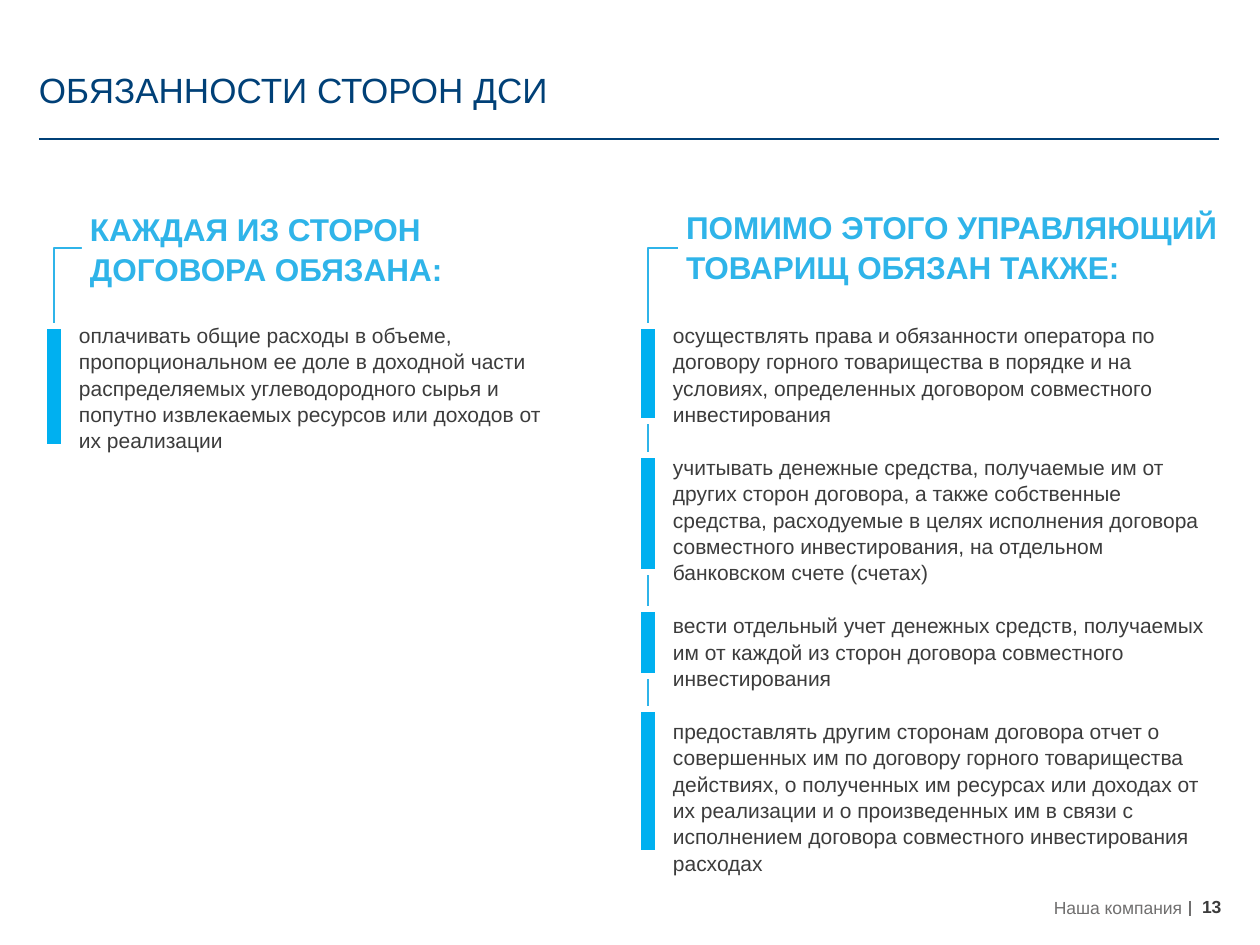
from pptx import Presentation
from pptx.dml.color import RGBColor
from pptx.enum.shapes import MSO_CONNECTOR, MSO_SHAPE
from pptx.enum.text import MSO_ANCHOR, PP_ALIGN
from pptx.oxml.ns import qn
from pptx.util import Emu, Pt
from lxml.etree import SubElement

NAVY, SKY, CYAN = "004077", "2FB4E9", "00B0F0"
DARK, GREY, WHITE = "3C3C3C", "706F6F", "FFFFFF"
TOP = 248
BAR = 20

LEFT = ["оплачивать общие расходы в объеме, пропорциональном ее доле в доходной части "
        "распределяемых углеводородного сырья и попутно извлекаемых ресурсов или доходов "
        "от их реализации"]
RIGHT = [
    "осуществлять права и обязанности оператора по договору горного товарищества в порядке "
    "и на условиях, определенных договором совместного инвестирования",
    "учитывать денежные средства, получаемые им от других сторон договора, а также "
    "собственные средства, расходуемые в целях исполнения договора совместного "
    "инвестирования, на отдельном банковском счете (счетах)",
    "вести отдельный учет денежных средств, получаемых им от каждой из сторон договора "
    "совместного инвестирования",
    "предоставлять другим сторонам договора отчет о совершенных им по договору горного "
    "товарищества действиях, о полученных им ресурсах или доходах от их реализации и о "
    "произведенных им в связи с исполнением договора совместного инвестирования расходах",
]


def px(num):
    """Turn pixels into EMU."""
    return Emu(round(num * 914400 / 126))


def hue(code):
    """Turn a hex string into a colour."""
    return RGBColor.from_string(code)


def rule(slide, x1, y1, x2, y2, color, width):
    """Draw a straight line."""
    line = slide.shapes.add_connector(MSO_CONNECTOR.STRAIGHT, px(x1), px(y1), px(x2), px(y2))
    line.line.color.rgb = hue(color)
    line.line.width = Pt(width)
    SubElement(line._element.spPr, qn("a:effectLst"))


def hook(slide, left, foot, right):
    """Draw the open bracket that links a heading to its bars."""
    pen = slide.shapes.build_freeform(px(left), px(foot), scale=1.0)
    pen.add_line_segments([(px(left), px(TOP)), (px(right), px(TOP))], close=False)
    shape = pen.convert_to_shape()
    shape.shadow.inherit = False
    shape.fill.background()
    shape.line.color.rgb = hue(SKY)
    shape.line.width = Pt(1)


def block(slide, box, fill, edge=None):
    """Add a filled rectangle, with a white edge of the given width if any."""
    shape = slide.shapes.add_shape(MSO_SHAPE.RECTANGLE, *map(px, box))
    shape.shadow.inherit = False
    shape.fill.solid()
    shape.fill.fore_color.rgb = hue(fill)
    if edge:
        shape.line.color.rgb = hue(WHITE)
        shape.line.width = Pt(edge)
    else:
        shape.line.fill.background()
    return shape


def write(shape, lines, size, color, bold=False, align=PP_ALIGN.LEFT,
          anchor=MSO_ANCHOR.TOP, pad=(0, 0), gap=0, lead=1.0):
    """Set the text of a shape, one paragraph for each line."""
    frame = shape.text_frame
    frame.word_wrap = True
    frame.vertical_anchor = anchor
    frame.margin_left = frame.margin_right = px(pad[0])
    frame.margin_top = frame.margin_bottom = px(pad[1])
    frame.text = "\n".join(lines)
    for num, para in enumerate(frame.paragraphs):
        para.alignment = align
        para.line_spacing = lead
        para.space_before = Pt(gap if num else 0)
        para.font.name = "Arial"
        para.font.size = Pt(size)
        para.font.bold = bold
        para.font.color.rgb = hue(color)


def label(slide, box, lines, size, color, **style):
    """Add a text box."""
    write(slide.shapes.add_textbox(*map(px, box)), lines, size, color, **style)


def column(slide, axis, ends, head, title, body, lines, bars):
    """Add a heading, its bracket, the duties and a bar beside each duty."""
    hook(slide, axis, *ends)
    write(block(slide, head, WHITE), [title], 18, SKY, bold=True,
          anchor=MSO_ANCHOR.MIDDLE, pad=(8, 8), lead=1.05)
    for top, high in bars:
        block(slide, (axis - BAR / 2, top, BAR, high), CYAN, 3)
    label(slide, body, lines, 12, DARK, pad=(13, 6), gap=15, lead=1.05)


def main():
    """Build the slide and save it."""
    deck = Presentation()
    deck.slide_width, deck.slide_height = px(1260), px(945)
    slide = deck.slides.add_slide(deck.slide_layouts[6])

    label(slide, (39, 26, 1179, 85), ["ОБЯЗАННОСТИ СТОРОН ДСИ"], 20, NAVY,
          anchor=MSO_ANCHOR.BOTTOM)
    rule(slide, 39, 139, 1219, 139, NAVY, 1)

    column(slide, 54, (413, 581), (82, 214, 508, 68), "КАЖДАЯ ИЗ СТОРОН ДОГОВОРА ОБЯЗАНА:",
           (66, 315, 497, 140), LEFT, [(326, 121)])
    column(slide, 648, (760, 1213), (678, 214, 576, 64),
           "ПОМИМО ЭТОГО УПРАВЛЯЮЩИЙ ТОВАРИЩ ОБЯЗАН ТАКЖЕ:",
           (660, 315, 566, 551), RIGHT, [(326, 95), (455, 117), (609, 67), (709, 144)])

    label(slide, (748, 896, 434, 23), ["Наша компания"], 10, GREY,
          align=PP_ALIGN.RIGHT, anchor=MSO_ANCHOR.MIDDLE)
    rule(slide, 1190, 901, 1190, 916, GREY, 0.75)
    label(slide, (1202, 896, 30, 23), ["13"], 10, DARK, bold=True)

    deck.save("out.pptx")


if __name__ == "__main__":
    main()
